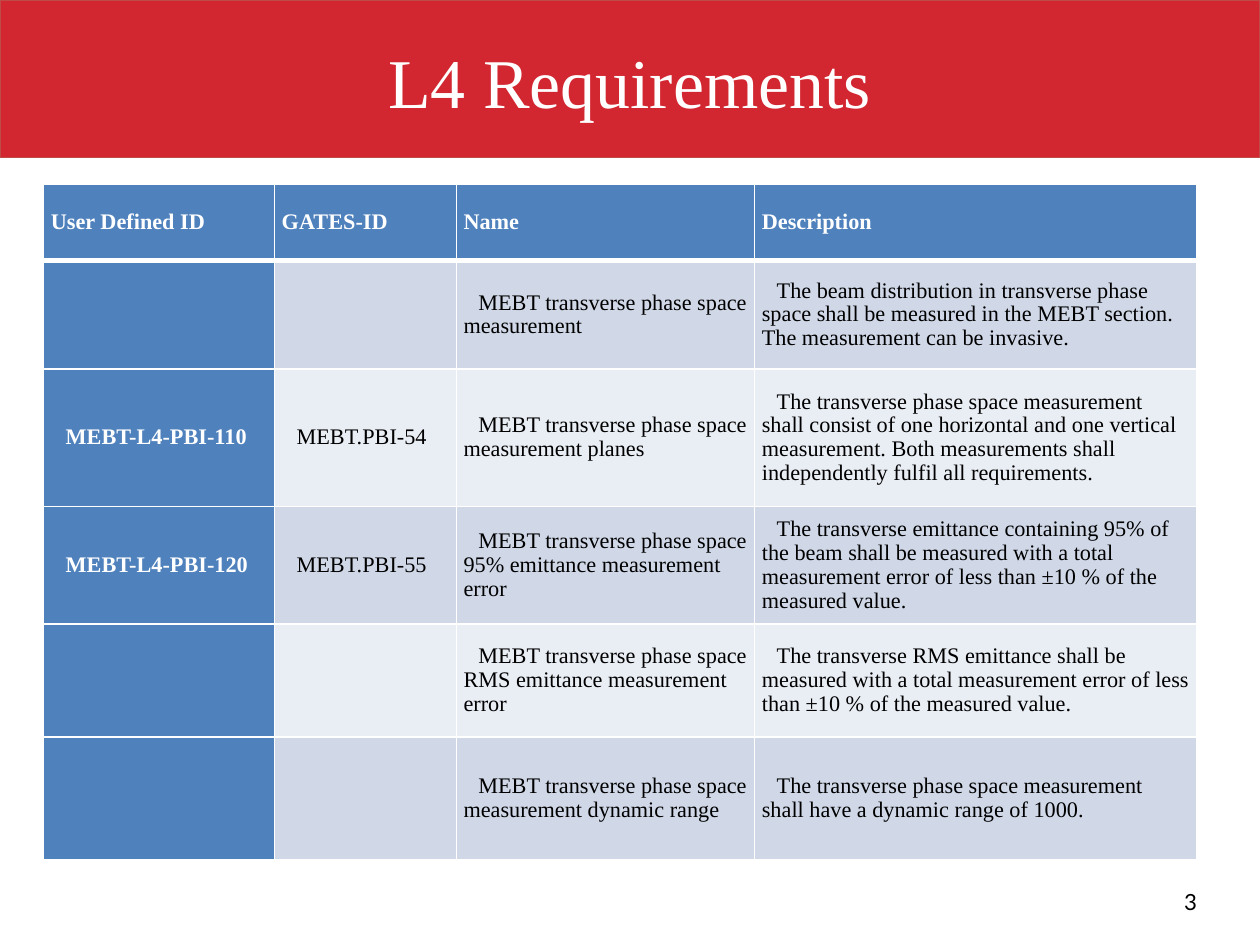
import pptx
import pptx.util
import pptx.dml.color
import pptx.enum.shapes
import pptx.enum.text
import pptx.oxml
import pptx.oxml.ns

Cm = pptx.util.Cm
Pt = pptx.util.Pt
RGBColor = pptx.dml.color.RGBColor
ALIGN = pptx.enum.text.PP_ALIGN
MIDDLE = pptx.enum.text.MSO_ANCHOR.MIDDLE

# Content
TITLE = "L4 Requirements"
PAGE = "3"
HEAD = ("User Defined ID", "GATES-ID", "Name", "Description")
ROWS = [
    ("", "", "MEBT transverse phase space measurement",
     "The beam distribution in transverse phase space shall be measured in "
     "the MEBT section. The measurement can be invasive."),
    ("MEBT-L4-PBI-110", "MEBT.PBI-54",
     "MEBT transverse phase space measurement planes",
     "The transverse phase space measurement shall consist of one horizontal "
     "and one vertical measurement. Both measurements shall independently "
     "fulfil all requirements."),
    ("MEBT-L4-PBI-120", "MEBT.PBI-55",
     "MEBT transverse phase space 95% emittance measurement error",
     "The transverse emittance containing 95% of the beam shall be measured "
     "with a total measurement error of less than ±10 % of the measured value."),
    ("", "", "MEBT transverse phase space RMS emittance measurement error",
     "The transverse RMS emittance shall be measured with a total measurement "
     "error of less than ±10 % of the measured value."),
    ("", "", "MEBT transverse phase space measurement dynamic range",
     "The transverse phase space measurement shall have a dynamic range of 1000."),
]
WIDTHS = (5.13, 4.04, 6.63, 9.83)
HEIGHTS = (1.7, 2.41, 3.05, 2.62, 2.51, 2.72)

# Style
SERIF, SANS = "Times New Roman", "Lato"
RED = RGBColor(0xD2, 0x26, 0x30)
BRICK = RGBColor(0xBE, 0x4B, 0x48)
BLUE = RGBColor(0x4F, 0x81, 0xBD)
BANDS = (RGBColor(0xD0, 0xD8, 0xE8), RGBColor(0xE9, 0xED, 0xF4))
WHITE = RGBColor(0xFF, 0xFF, 0xFF)
BLACK = RGBColor(0, 0, 0)


def style(par, name, size, color, bold=False):
    for run in par.runs:
        run.font.name = name
        run.font.size = Pt(size)
        run.font.color.rgb = color
        run.font.bold = bold


def fill_text(shape, text, name, size, color, align):
    frame = shape.text_frame
    frame.text = text
    frame.word_wrap = True
    frame.auto_size = pptx.enum.text.MSO_AUTO_SIZE.NONE
    frame.vertical_anchor = MIDDLE
    frame.margin_left = frame.margin_right = 0
    frame.margin_top = frame.margin_bottom = 0
    frame.paragraphs[0].alignment = align
    style(frame.paragraphs[0], name, size, color)


def edge(cell, low):
    props = cell._tc.get_or_add_tcPr()
    for spot, (side, width) in enumerate(zip("LRTB", (1, 1, 1, low))):
        line = pptx.oxml.parse_xml(
            f'<a:ln{side} {pptx.oxml.ns.nsdecls("a")} w="{Pt(width)}">'
            f'<a:solidFill><a:srgbClr val="{WHITE}"/></a:solidFill></a:ln{side}>')
        props.insert(spot, line)


def fill_cell(cell, text, row, col):
    head = row == 0
    dark = head or col == 0
    cell.fill.solid()
    cell.fill.fore_color.rgb = BLUE if dark else BANDS[(row - 1) % 2]
    edge(cell, 3 if head else 1)
    cell.vertical_anchor = MIDDLE
    cell.margin_left = cell.margin_right = Cm(0.16)
    cell.margin_top = cell.margin_bottom = 0
    if not text:
        return
    cell.text_frame.text = text
    par = cell.text_frame.paragraphs[0]
    par.line_spacing = Pt(15)
    if head:
        par.alignment = ALIGN.JUSTIFY
        par.space_before = par.space_after = Pt(3)
    else:
        props = par._p.get_or_add_pPr()
        props.set("marL", "0")
        props.set("indent", str(Cm(0.33)))
    style(par, SERIF, 14, WHITE if dark else BLACK, dark)


deck = pptx.Presentation()
deck.slide_width, deck.slide_height = Cm(28), Cm(21)
slide = deck.slides.add_slide(deck.slide_layouts[5])
shapes = slide.shapes

# Red band, placed behind the title
band = shapes.add_shape(pptx.enum.shapes.MSO_SHAPE.RECTANGLE,
                        0, 0, deck.slide_width, Cm(3.5))
band.shadow.inherit = False
band.fill.solid()
band.fill.fore_color.rgb = RED
band.line.color.rgb = BRICK
band.line.width = Pt(0.75)
title = shapes.title
title.element.addprevious(band.element)

# Title
title.left, title.top, title.width, title.height = Cm(1), Cm(0.84), Cm(26), Cm(1.88)
fill_text(title, TITLE, SERIF, 44, WHITE, ALIGN.CENTER)

# Table of requirements
grid = shapes.add_table(len(HEIGHTS), len(WIDTHS), Cm(0.97), Cm(4.09),
                        Cm(sum(WIDTHS)), Cm(sum(HEIGHTS))).table
for col, width in zip(grid.columns, WIDTHS):
    col.width = Cm(width)
for row, height in zip(grid.rows, HEIGHTS):
    row.height = Cm(height)
for r, texts in enumerate([HEAD] + ROWS):
    for c, text in enumerate(texts):
        fill_cell(grid.cell(r, c), text, r, c)

# Page number
page = shapes.add_textbox(Cm(20.07), Cm(19.51), Cm(6.53), Cm(1.07))
fill_text(page, PAGE, SANS, 14, BLACK, ALIGN.RIGHT)

deck.save("out.pptx")
